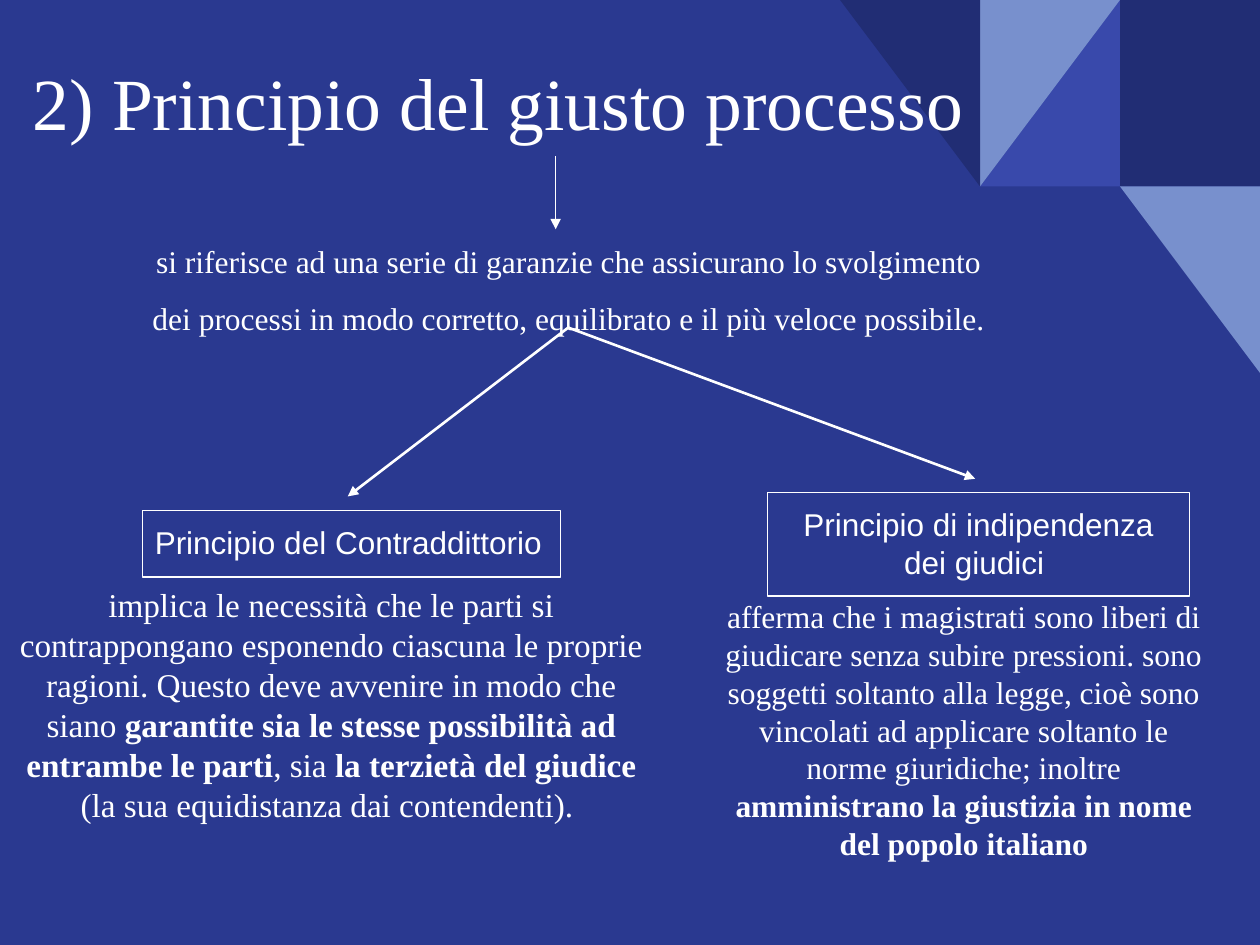
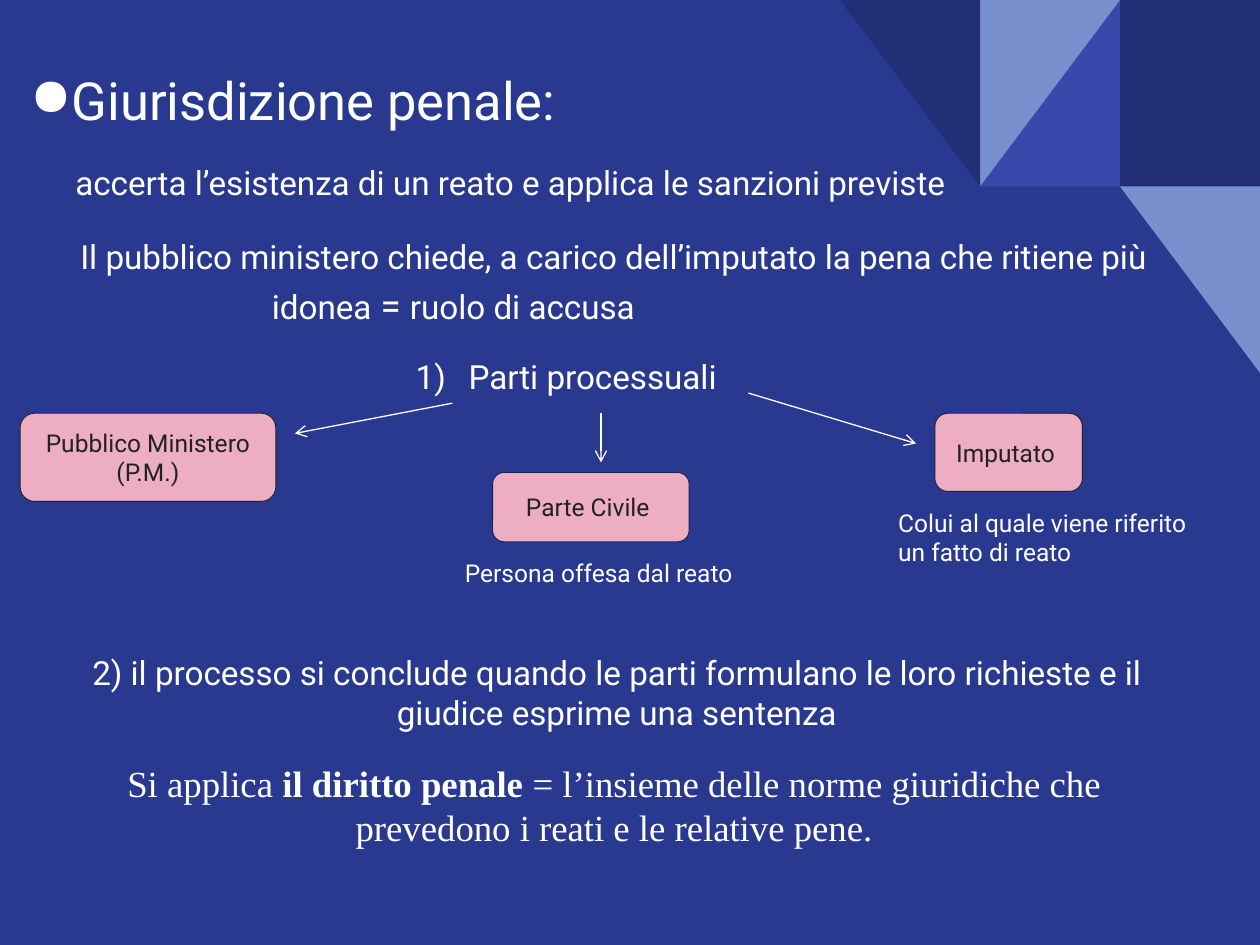
from dataclasses import dataclass

from lxml import etree
from pptx import Presentation
from pptx import util as u
from pptx.dml.color import RGBColor
from pptx.enum import shapes, text
from pptx.oxml.ns import qn

Inches = u.Inches
SHAPE = shapes.MSO_SHAPE
LEFT, CENTER = text.PP_ALIGN.LEFT, text.PP_ALIGN.CENTER
TOP, MIDDLE, BOTTOM = (text.MSO_ANCHOR.TOP, text.MSO_ANCHOR.MIDDLE,
                       text.MSO_ANCHOR.BOTTOM)


@dataclass(frozen=True)
class Theme:
    background: str = "2A3990"
    navy: str = "212D74"
    indigo: str = "3949AB"
    sky: str = "7890CD"
    pink: str = "EDADC3"
    white: str = "FFFFFF"
    dark: str = "222222"
    outline: str = "182156"
    serif: str = "Times New Roman"
    sans: str = "Roboto"
    plain: str = "Arial"
    title: int = 42
    heading: int = 30
    large: int = 21
    body: int = 19
    medium: int = 18
    label: int = 14


THEME = Theme()


def color(value):
    return RGBColor.from_string(value)


# Text
def add_span(para, words, font, size, ink=THEME.white, bold=False):
    span = para.add_run()
    span.text = words
    span.font.name, span.font.size, span.font.bold = font, u.Pt(size), bold
    span.font.color.rgb = color(ink)


def write(para, words, font, size, ink=THEME.white, align=LEFT):
    """Fill a paragraph; words between ** marks are bold."""
    para.alignment = align
    for index, part in enumerate(words.split("**")):
        if part:
            add_span(para, part, font, size, ink, bold=index % 2 == 1)


def set_indent(para, left, first=0):
    properties = para._p.get_or_add_pPr()
    properties.set("marL", str(Inches(left)))
    properties.set("indent", str(Inches(first)))


def add_bullet(para, kind, **attributes):
    properties = para._p.get_or_add_pPr()
    bullet_color = etree.SubElement(properties, qn("a:buClr"))
    etree.SubElement(bullet_color, qn("a:srgbClr"), val=THEME.white)
    etree.SubElement(properties, qn(kind), **attributes)


def set_frame(box, anchor=TOP, inset=0.1):
    frame = box.text_frame
    frame.word_wrap = True
    frame.vertical_anchor = anchor
    frame.margin_left = frame.margin_right = Inches(0.1)
    frame.margin_top = frame.margin_bottom = Inches(inset)
    return frame.paragraphs[0]


def add_text(page, place, words, font, size, align=CENTER, anchor=TOP,
             inset=0.1):
    box = page.shapes.add_textbox(*map(Inches, place))
    para = set_frame(box, anchor, inset)
    write(para, words, font, size, align=align)
    return para


# Shapes and arrows
def add_figure(page, kind, place, fill=None, line=None, width=0.75):
    figure = page.shapes.add_shape(kind, *map(Inches, place))
    figure.shadow.inherit = False
    if fill:
        figure.fill.solid()
        figure.fill.fore_color.rgb = color(fill)
    else:
        figure.fill.background()
    if line:
        figure.line.color.rgb = color(line)
        figure.line.width = u.Pt(width)
    else:
        figure.line.fill.background()
    return figure


def add_framed_label(page, place, words, align):
    figure = add_figure(page, SHAPE.RECTANGLE, place, line=THEME.white)
    write(set_frame(figure), words, THEME.plain, THEME.medium, align=align)


def add_party(page, place, words, line=THEME.dark):
    figure = add_figure(page, SHAPE.ROUNDED_RECTANGLE, place, THEME.pink,
                        line, 0.5)
    write(set_frame(figure, MIDDLE, 0.05), words, THEME.sans, THEME.label,
          THEME.dark, CENTER)


def add_arrow(page, start, end, head, width=0.75):
    arrow = page.shapes.add_connector(shapes.MSO_CONNECTOR.STRAIGHT,
                                      *map(Inches, start + end))
    arrow.line.color.rgb = color(THEME.white)
    arrow.line.width = u.Pt(width)
    properties = arrow._element.spPr
    etree.SubElement(properties.find(qn("a:ln")), qn("a:tailEnd"), type=head)
    etree.SubElement(properties, qn("a:effectLst"))


# Shared background and corner mosaic
def add_page(deck):
    page = deck.slides.add_slide(deck.slide_layouts[6])
    page.background.fill.solid()
    page.background.fill.fore_color.rgb = color(THEME.background)
    tile_width, tile_height = 10 / 9, 1.48
    triangle = SHAPE.RIGHT_TRIANGLE
    mosaic = [  # column, row, kind, fill, rotation, mirrored
        (8, 0, SHAPE.RECTANGLE, THEME.navy, 0, False),
        (7, 0, triangle, THEME.indigo, 0, True),
        (7, 0, triangle, THEME.sky, 180, True),
        (6, 0, triangle, THEME.navy, 180, False),
        (8, 1, triangle, THEME.sky, 180, False),
    ]
    for column, row, kind, fill, rotation, mirrored in mosaic:
        place = (column * tile_width, row * tile_height, tile_width,
                 tile_height)
        tile = add_figure(page, kind, place, fill)
        tile.rotation = rotation
        if mirrored:
            tile._element.spPr.find(qn("a:xfrm")).set("flipH", "1")
    return page


def build_fair_trial(deck):
    page = add_page(deck)
    add_text(page, (0.16, -0.22, 8.99, 1.47),
             "2) Principio del giusto processo", THEME.serif, THEME.title,
             LEFT, BOTTOM)

    # Definition
    definition = add_text(
        page, (0.96, 1.67, 7.11, 0.82),
        "si riferisce ad una serie di garanzie che assicurano lo svolgimento "
        "dei processi in modo corretto, equilibrato e il più veloce "
        "possibile.", THEME.serif, THEME.medium)
    definition.line_spacing = 1.5

    # The two principles
    add_framed_label(page, (1.13, 4.05, 3.32, 0.53),
                     "Principio del Contraddittorio", LEFT)
    add_text(page, (0, 4.54, 5.26, 2.47),
             "implica le necessità che le parti si contrappongano esponendo "
             "ciascuna le proprie ragioni. Questo deve avvenire in modo che "
             "siano **garantite sia le stesse possibilità ad entrambe le "
             "parti**, sia **la terzietà del giudice** (la sua equidistanza "
             "dai contendenti). ", THEME.serif, THEME.body)
    add_framed_label(page, (6.09, 3.91, 3.35, 0.82),
                     "Principio di indipendenza dei giudici ", CENTER)
    add_text(page, (5.62, 4.64, 4.06, 2.47),
             "afferma che i magistrati sono liberi di giudicare senza subire "
             "pressioni. sono soggetti soltanto alla legge, cioè sono "
             "vincolati ad applicare soltanto le norme giuridiche; inoltre "
             "**amministrano la giustizia in nome del popolo italiano**",
             THEME.serif, THEME.medium)

    # Arrows
    add_arrow(page, (4.41, 1.24), (4.41, 1.82), "triangle")
    for end in ((2.76, 3.94), (7.74, 3.8)):
        add_arrow(page, (4.51, 2.6), end, "triangle", 1.5)


def build_criminal_jurisdiction(deck):
    page = add_page(deck)
    title = add_text(page, (0.14, -0.08, 8.99, 1.22), "Giurisdizione penale:",
                     THEME.sans, THEME.heading, LEFT, BOTTOM)
    set_indent(title, 0)
    add_bullet(title, "a:buChar", char="●")

    # Purpose and role of the prosecution
    purpose = add_text(
        page, (0.5, 1.14, 8.74, 1.77),
        "accerta l’esistenza di un reato e applica le sanzioni previste",
        THEME.sans, THEME.body, LEFT)
    request = purpose._parent.add_paragraph()
    write(request, "Il pubblico ministero chiede, a carico dell’imputato la "
          "pena che ritiene più", THEME.sans, THEME.body, align=CENTER)
    role = purpose._parent.add_paragraph()
    write(role, "idonea", THEME.sans, THEME.body)
    add_span(role, " = ", THEME.sans, THEME.large)
    add_span(role, "ruolo di accusa", THEME.sans, THEME.body)
    set_indent(role, 1.56)
    for para, gap in ((purpose, 16), (request, 0), (role, 16)):
        para.line_spacing = 1.15
        para.space_after = u.Pt(gap)

    # Parties to the trial
    parties = add_text(page, (3.12, 2.73, 3.59, 0.49), "Parti processuali",
                       THEME.sans, THEME.body, LEFT)
    set_indent(parties, 0.5, -0.42)
    add_bullet(parties, "a:buAutoNum", type="arabicParenR")
    add_party(page, (0.16, 3.28, 2.03, 0.7), "Pubblico Ministero (P.M.)")
    add_party(page, (3.91, 3.75, 1.56, 0.55), "Parte Civile ", THEME.outline)
    add_party(page, (7.42, 3.28, 1.17, 0.62), "Imputato ")
    for place, words in (
            ((3.59, 4.38, 2.58, 0.34), "Persona offesa dal reato"),
            ((7.03, 3.98, 2.58, 0.57),
             "Colui al quale viene riferito un fatto di reato")):
        add_text(page, place, words, THEME.sans, THEME.label, LEFT,
                 inset=0.05)
    for start, end in (((3.59, 3.2), (2.34, 3.44)),
                       ((4.77, 3.28), (4.77, 3.67)),
                       ((5.94, 3.12), (7.27, 3.52))):
        add_arrow(page, start, end, "arrow")

    # Conclusion
    add_text(page, (0.47, 5.08, 8.85, 0.83),
             "2) il processo si conclude quando le parti formulano le loro "
             "richieste e il giudice esprime una sentenza",
             THEME.sans, THEME.body)
    add_text(page, (0.38, 5.94, 8.99, 1.05),
             "Si applica **il diritto penale **= l’insieme delle norme "
             "giuridiche che prevedono i reati e le relative pene.",
             THEME.serif, THEME.large)


def main():
    deck = Presentation()
    deck.slide_width, deck.slide_height = Inches(10), Inches(7.5)
    build_fair_trial(deck)
    build_criminal_jurisdiction(deck)
    deck.save("out.pptx")


if __name__ == "__main__":
    main()
